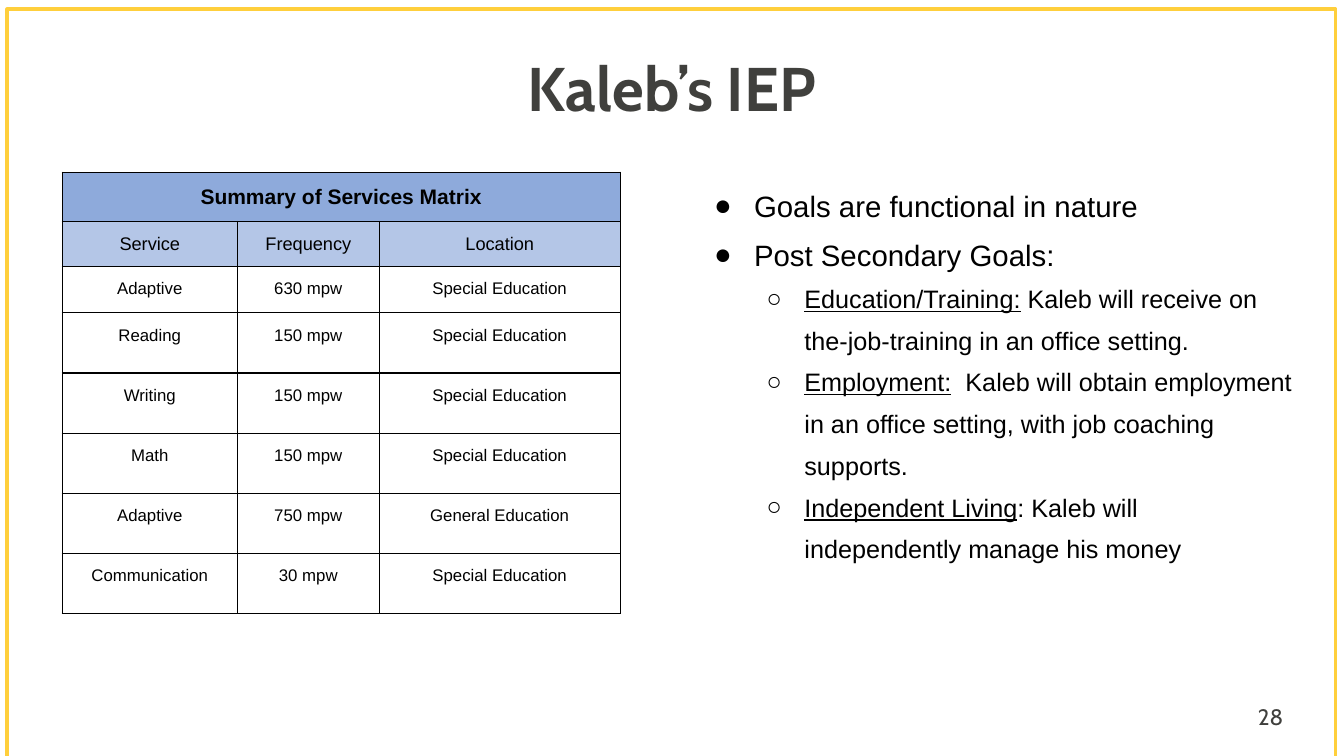
from dataclasses import dataclass

import pptx
import pptx.dml.color
import pptx.enum.shapes
import pptx.enum.text
import pptx.oxml
import pptx.oxml.ns
import pptx.util
from lxml import etree

Pt = pptx.util.Pt
RGBColor = pptx.dml.color.RGBColor
PP_ALIGN = pptx.enum.text.PP_ALIGN
MSO_ANCHOR = pptx.enum.text.MSO_ANCHOR

BLACK = RGBColor(0x00, 0x00, 0x00)
CHARCOAL = RGBColor(0x40, 0x40, 0x3D)
GOLD = RGBColor(0xFF, 0xCF, 0x3C)
HEAD_BLUE = RGBColor(0x8E, 0xAA, 0xDB)
SUBHEAD_BLUE = RGBColor(0xB4, 0xC6, 0xE7)


@dataclass
class Box:
    left: float
    top: float
    width: float
    height: float

    def lengths(self) -> tuple:
        return Pt(self.left), Pt(self.top), Pt(self.width), Pt(self.height)


@dataclass
class TextStyle:
    font: str
    size: float
    color: RGBColor = BLACK
    bold: bool = False


@dataclass
class Level:
    mark: str
    size: float
    left: float
    hanging: float


@dataclass
class Goal:
    level: int
    text: str
    heading: str = ""


@dataclass
class RowStyle:
    size: float
    fill: RGBColor | None = None
    bold: bool = False


LEVELS = [Level("●", 21, 36, 28.5), Level("○", 18, 72, 27)]
GOALS = [
    Goal(0, "Goals are functional in nature"),
    Goal(0, "Post Secondary Goals:"),
    Goal(1, " Kaleb will receive on the-job-training in an office setting.",
         "Education/Training:"),
    Goal(1, "  Kaleb will obtain employment in an office setting, "
            "with job coaching supports.", "Employment:"),
    Goal(1, ": Kaleb will independently manage his money",
         "Independent Living"),
]

SERVICES = [
    ("Summary of Services Matrix", "", ""),
    ("Service", "Frequency", "Location"),
    ("Adaptive", "630 mpw", "Special Education"),
    ("Reading", "150 mpw", "Special Education"),
    ("Writing", "150 mpw", "Special Education"),
    ("Math", "150 mpw", "Special Education"),
    ("Adaptive", "750 mpw", "General Education"),
    ("Communication", "30 mpw", "Special Education"),
]
COLUMN_WIDTHS = [125, 101.5, 172]
ROW_HEIGHTS = [33.5, 21.5, 33] + [43] * 5
HEAD_STYLES = [RowStyle(15, HEAD_BLUE, True), RowStyle(13, SUBHEAD_BLUE)]
BODY_STYLE = RowStyle(12)


def style_run(r, style: TextStyle) -> None:
    r.font.name = style.font
    r.font.size = Pt(style.size)
    r.font.bold = style.bold
    r.font.color.rgb = style.color


def add_frame(s, box: Box):
    sp = s.shapes.add_shape(pptx.enum.shapes.MSO_SHAPE.RECTANGLE,
                            *box.lengths())
    sp.shadow.inherit = False
    sp.fill.background()
    sp.line.color.rgb = GOLD
    sp.line.width = Pt(2.25)


def add_label(s, box: Box, text: str, style: TextStyle,
              align=PP_ALIGN.LEFT, spacing: float = 1.0) -> None:
    tf = s.shapes.add_textbox(*box.lengths()).text_frame
    tf.word_wrap = True
    tf.vertical_anchor = MSO_ANCHOR.MIDDLE
    tf.text = text
    p = tf.paragraphs[0]
    p.alignment = align
    p.line_spacing = spacing
    style_run(p.runs[0], style)


def set_bullet(p, level: Level) -> None:
    pPr = p._p.get_or_add_pPr()
    pPr.set("marL", str(Pt(level.left)))
    pPr.set("indent", str(-Pt(level.hanging)))
    qn = pptx.oxml.ns.qn
    color = etree.SubElement(pPr, qn("a:buClr"))
    etree.SubElement(color, qn("a:srgbClr")).set("val", str(BLACK))
    etree.SubElement(pPr, qn("a:buFont")).set("typeface", "Arial")
    etree.SubElement(pPr, qn("a:buChar")).set("char", level.mark)


def add_goals(s, box: Box, goals: list[Goal]) -> None:
    tf = s.shapes.add_textbox(*box.lengths()).text_frame
    tf.word_wrap = True
    tf.margin_left = tf.margin_right = Pt(7.2)
    tf.margin_top = tf.margin_bottom = Pt(7.2)
    for i, goal in enumerate(goals):
        p = tf.add_paragraph() if i else tf.paragraphs[0]
        level = LEVELS[goal.level]
        p.level = goal.level
        set_bullet(p, level)
        p.line_spacing = 1.38
        for text, underlined in ((goal.heading, True), (goal.text, False)):
            if text:
                r = p.add_run()
                r.text = text
                style_run(r, TextStyle("Arial", level.size))
                r.font.underline = underlined


def set_borders(cell) -> None:
    """Draw a thin black line on all four sides of the cell."""
    tcPr = cell._tc.get_or_add_tcPr()
    for i, side in enumerate(("lnL", "lnR", "lnT", "lnB")):
        tcPr.insert(i, pptx.oxml.parse_xml(
            f'<a:{side} {pptx.oxml.ns.nsdecls("a")} w="{Pt(1)}">'
            f'<a:solidFill><a:srgbClr val="{BLACK}"/></a:solidFill>'
            f'</a:{side}>'))


def fill_cell(cell, text: str, style: RowStyle) -> None:
    cell.margin_left = cell.margin_right = Pt(5)
    cell.margin_top = cell.margin_bottom = Pt(7.2)
    if style.fill is None:
        cell.fill.background()
    else:
        cell.fill.solid()
        cell.fill.fore_color.rgb = style.fill
    set_borders(cell)
    cell.text_frame.text = text
    p = cell.text_frame.paragraphs[0]
    p.alignment = PP_ALIGN.CENTER
    p.line_spacing = 1.15
    for r in p.runs:
        style_run(r, TextStyle("Arial", style.size, bold=style.bold))


def add_services(s, left: float, top: float) -> None:
    box = Box(left, top, sum(COLUMN_WIDTHS), sum(ROW_HEIGHTS))
    table = s.shapes.add_table(len(SERVICES), len(COLUMN_WIDTHS),
                               *box.lengths()).table
    table.first_row = table.horz_banding = False
    for column, width in zip(table.columns, COLUMN_WIDTHS):
        column.width = Pt(width)
    for i, (row, height) in enumerate(zip(table.rows, ROW_HEIGHTS)):
        row.height = Pt(height)
        style = HEAD_STYLES[i] if i < len(HEAD_STYLES) else BODY_STYLE
        for cell, text in zip(row.cells, SERVICES[i]):
            fill_cell(cell, text, style)
    table.cell(0, 0).merge(table.cell(0, len(COLUMN_WIDTHS) - 1))


def main() -> None:
    prs = pptx.Presentation()
    prs.slide_width, prs.slide_height = Pt(960), Pt(540)
    s = prs.slides.add_slide(prs.slide_layouts[6])
    add_frame(s, Box(5, 6.5, 949, 535))
    add_label(s, Box(66, 13, 828, 104.5), "Kaleb’s IEP",
              TextStyle("Cabin", 44, CHARCOAL, True), PP_ALIGN.CENTER, 0.9)
    add_goals(s, Box(495.5, 117.5, 438.5, 383), GOALS)
    add_label(s, Box(891.5, 497, 50.5, 29), "28",
              TextStyle("Cabin", 16, CHARCOAL))
    add_services(s, 44.5, 123)
    prs.save("out.pptx")


if __name__ == "__main__":
    main()
